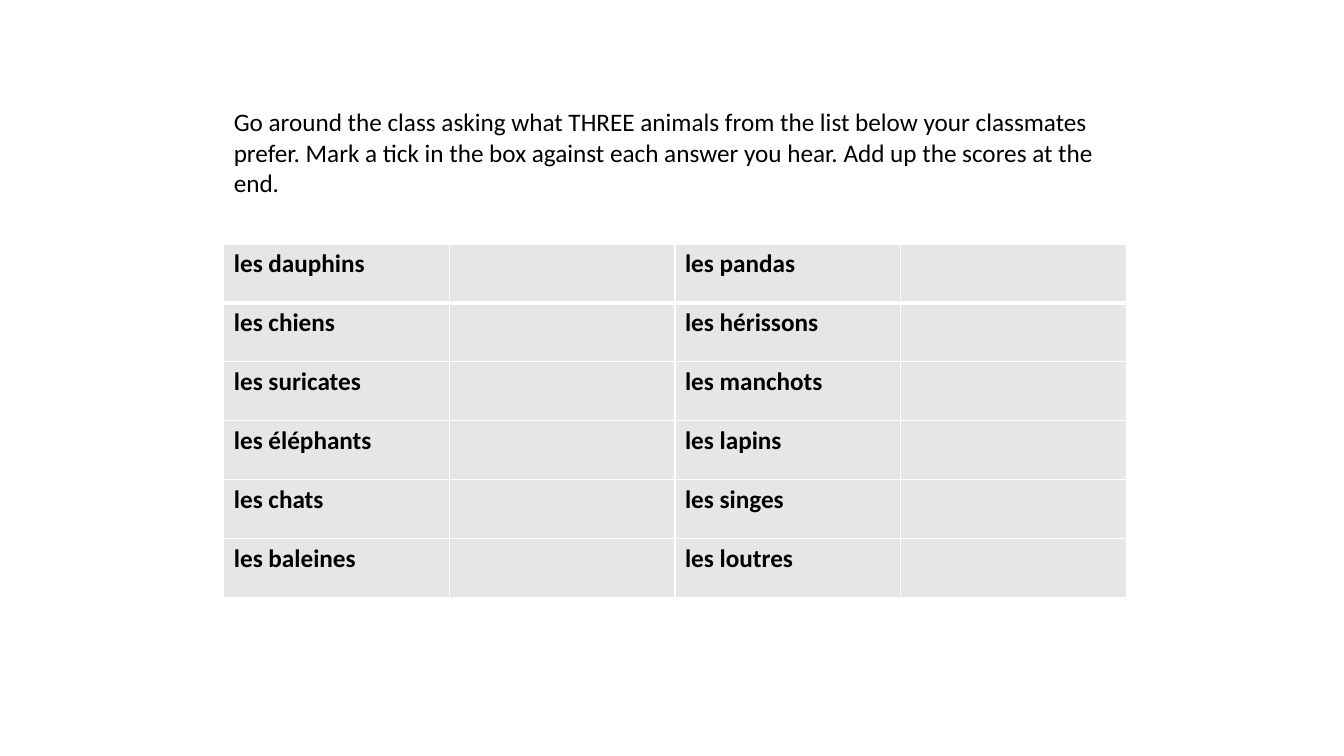
from lxml import etree
from pptx import Presentation, util as u
from pptx.dml.color import RGBColor
from pptx.enum import text
from pptx.oxml.ns import qn

# Grid: four equal columns and six equal rows
LEFT, WIDTH = 2.22, 8.95
TEXT_TOP, TEXT_HEIGHT = 1.01, 1.31
TABLE_TOP, ROW_HEIGHT = 2.42, 0.585
COLUMNS = 4
WHITE, GREY, BLACK = "FFFFFF", "E7E6E6", "000000"

INSTRUCTIONS = (
    "Go around the class asking what THREE animals from the list below your "
    "classmates prefer. Mark a tick in the box against each answer you hear. "
    "Add up the scores at the end."
)
ANIMAL_PAIRS = [
    ("les dauphins", "les pandas"),
    ("les chiens", "les hérissons"),
    ("les suricates", "les manchots"),
    ("les éléphants", "les lapins"),
    ("les chats", "les singes"),
    ("les baleines", "les loutres"),
]


def color(value):
    return RGBColor.from_string(value)


def write(frame, words, bold=False):
    paragraph = frame.paragraphs[0]
    run = paragraph.add_run() if words else None
    if run:
        run.text = words
    font = run.font if run else paragraph.font
    for name, value in {"name": "Calibri", "size": u.Pt(18), "bold": bold}.items():
        setattr(font, name, value)
    font.color.rgb = color(BLACK)


def add_instructions(slide):
    box = slide.shapes.add_textbox(
        *map(u.Inches, (LEFT, TEXT_TOP, WIDTH, TEXT_HEIGHT)))
    box.text_frame.word_wrap = True
    box.text_frame.auto_size = text.MSO_AUTO_SIZE.SHAPE_TO_FIT_TEXT
    write(box.text_frame, INSTRUCTIONS)


def set_borders(cell, widths):
    properties = cell._tc.get_or_add_tcPr()
    for side, width in widths.items():
        line = etree.SubElement(properties, qn(f"a:ln{side}"), w=str(u.Pt(width)))
        fill = etree.SubElement(line, qn("a:solidFill"))
        etree.SubElement(fill, qn("a:srgbClr"), val=WHITE)


def add_tally_table(slide, pairs):
    table = slide.shapes.add_table(
        len(pairs), COLUMNS,
        *map(u.Inches, (LEFT, TABLE_TOP, WIDTH, ROW_HEIGHT * len(pairs)))).table
    table.horz_banding = False
    for column in table.columns:
        column.width = u.Inches(WIDTH / COLUMNS)
    for index, (row, (first, second)) in enumerate(zip(table.rows, pairs)):
        row.height = u.Inches(ROW_HEIGHT)
        # A thick rule separates the first row from the second
        widths = {"L": 1, "R": 1, "T": 3 if index == 1 else 1,
                  "B": 3 if index == 0 else 1}
        # Each animal is followed by an empty box for ticks
        for cell, words in zip(row.cells, (first, "", second, "")):
            set_borders(cell, widths)
            cell.fill.solid()
            cell.fill.fore_color.rgb = color(GREY)
            write(cell.text_frame, words, bold=True)


def main():
    presentation = Presentation()
    presentation.slide_width = u.Inches(13.33)
    presentation.slide_height = u.Inches(7.5)
    slide = presentation.slides.add_slide(presentation.slide_layouts[6])
    add_instructions(slide)
    add_tally_table(slide, ANIMAL_PAIRS)
    presentation.save("out.pptx")


if __name__ == "__main__":
    main()
